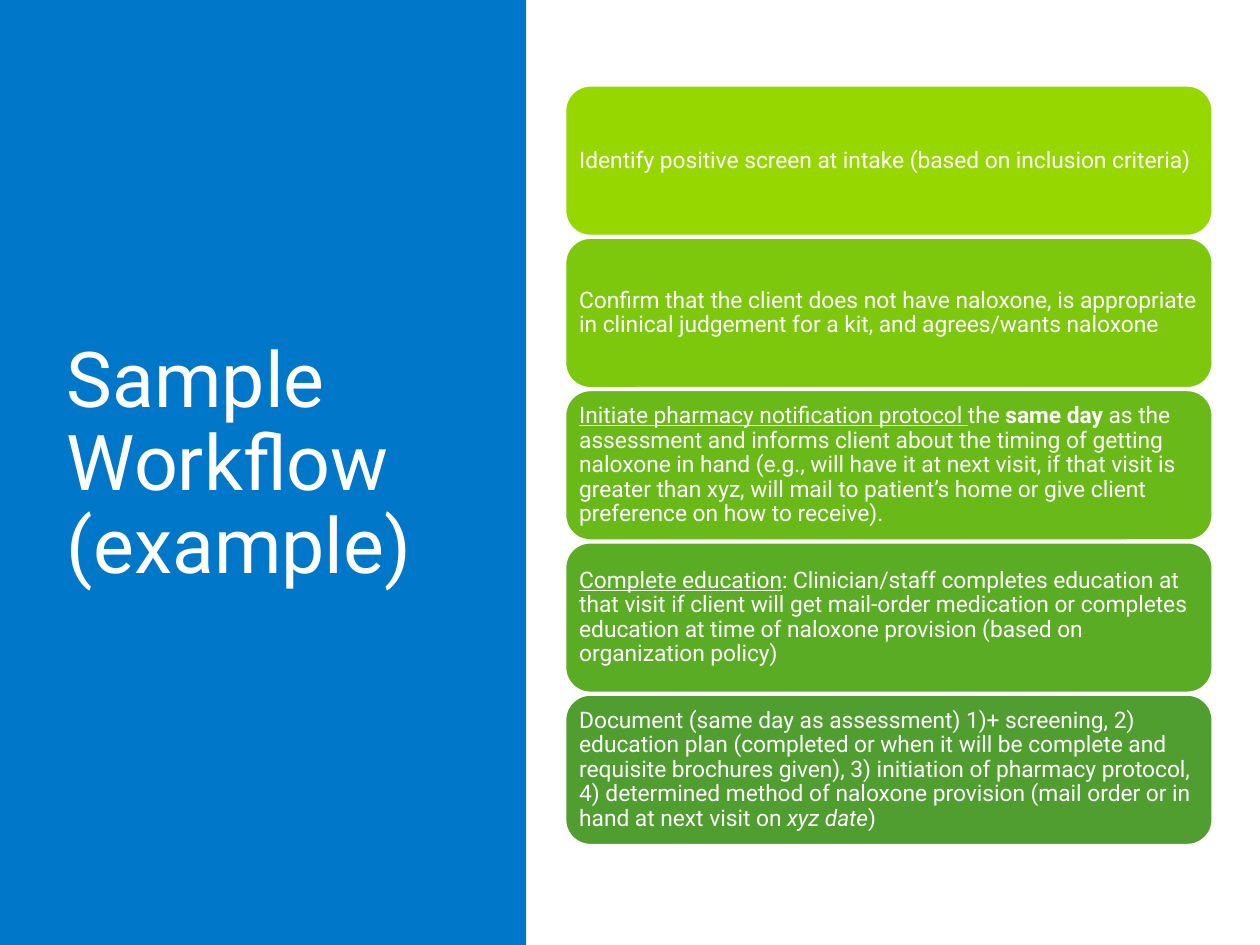
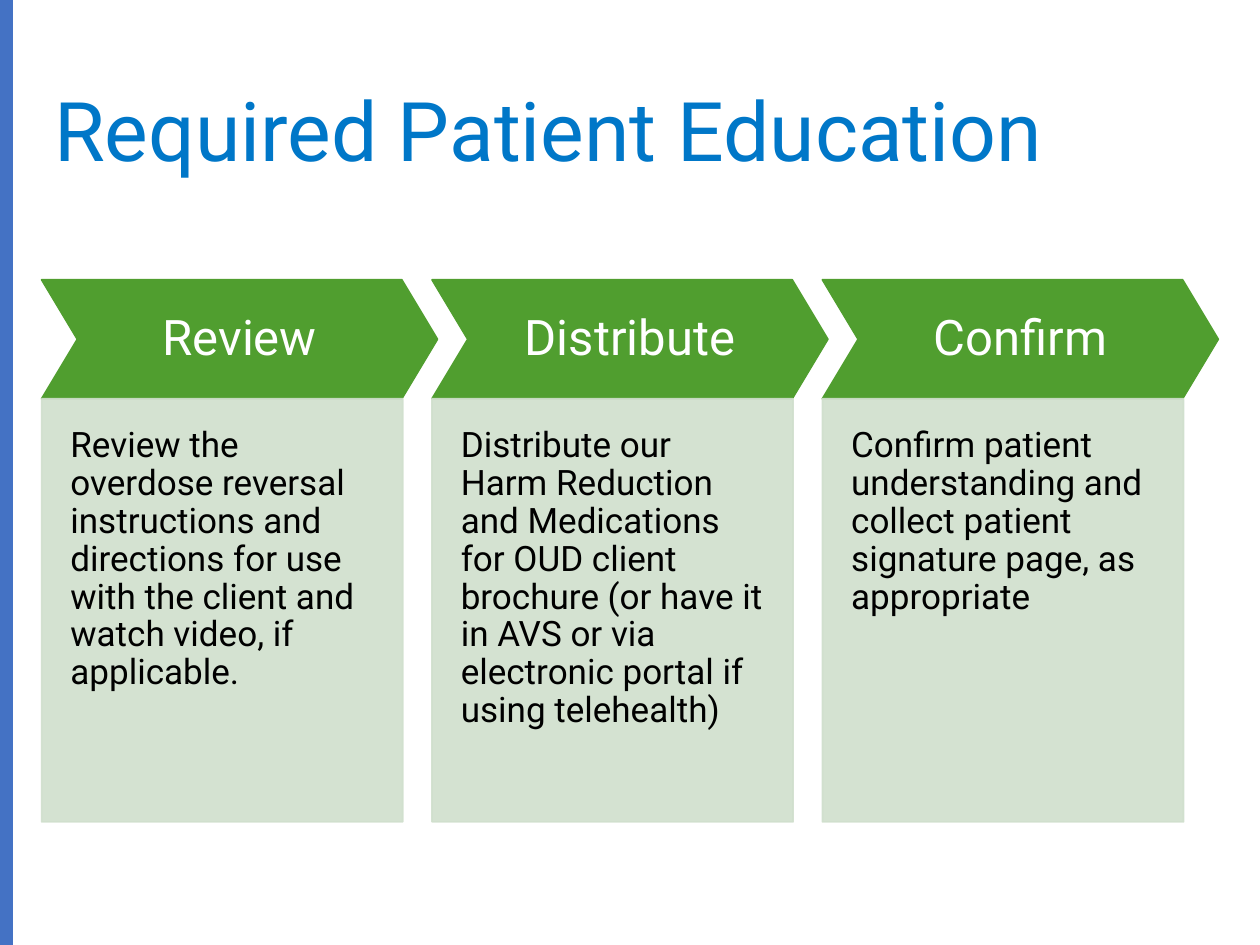
"""Builds two slides: a sample naloxone workflow and the required patient education."""
from lxml import etree
from pptx import Presentation
from pptx.dml.color import RGBColor
from pptx.enum.shapes import MSO_SHAPE
from pptx.enum.text import MSO_ANCHOR, MSO_AUTO_SIZE, PP_ALIGN
from pptx.oxml.ns import qn
from pptx.util import Cm, Pt

RECT, ROUND, CHEVRON = MSO_SHAPE.RECTANGLE, MSO_SHAPE.ROUNDED_RECTANGLE, MSO_SHAPE.CHEVRON
TOP, MIDDLE = MSO_ANCHOR.TOP, MSO_ANCHOR.MIDDLE
LEFT, CENTER = PP_ALIGN.LEFT, PP_ALIGN.CENTER
NO_FIT = MSO_AUTO_SIZE.NONE

WHITE = RGBColor(0xFF, 0xFF, 0xFF)
BLACK = RGBColor(0x00, 0x00, 0x00)
BLUE = RGBColor(0x00, 0x77, 0xC8)
EDGE_BLUE = RGBColor(0x44, 0x72, 0xC4)
GREEN = RGBColor(0x50, 0x9E, 0x2F)
PALE_GREEN = RGBColor(0xD0, 0xDF, 0xCD)
STEP_GREENS = [
    RGBColor(0x97, 0xD7, 0x00),
    RGBColor(0x7D, 0xC8, 0x0C),
    RGBColor(0x69, 0xBA, 0x18),
    RGBColor(0x5A, 0xAC, 0x24),
    GREEN,
]
FONT = "Roboto"
WIDTH, HEIGHT = 25.4, 19.05

PLAIN, UNDERLINE, BOLD, ITALIC = {}, {"underline": True}, {"bold": True}, {"italic": True}

WORKFLOW_TITLE = "Sample Workflow (example)"
WORKFLOW_STEPS = [
    [("Identify positive screen at intake (based on inclusion criteria)", PLAIN)],
    [("Confirm that the client does not have naloxone, is appropriate in clinical "
      "judgement for a kit, and agrees/wants naloxone", PLAIN)],
    [("Initiate pharmacy notification protocol ", UNDERLINE),
     ("the ", PLAIN),
     ("same day", BOLD),
     (" as the assessment and informs client about the timing of getting naloxone in "
      "hand (e.g., will have it at next visit, if that visit is greater than xyz, will "
      "mail to patient’s home or give client preference on how to receive).", PLAIN)],
    [("Complete education", UNDERLINE),
     (": Clinician/staff completes education at that visit if client will get mail-order "
      "medication or completes education at time of naloxone provision (based on "
      "organization policy)", PLAIN)],
    [("Document (same day as assessment) 1)+ screening, 2) education plan (completed or "
      "when it will be complete and requisite brochures given), 3) initiation of pharmacy "
      "protocol, 4) determined method of naloxone provision (mail order or in hand at "
      "next visit on ", PLAIN),
     ("xyz date", ITALIC),
     (")", PLAIN)],
]

EDUCATION_TITLE = "Required Patient Education"
EDUCATION_STEPS = [
    ("Review", "Review the overdose reversal instructions and directions for use with the "
               "client and watch video, if applicable."),
    ("Distribute", "Distribute our Harm Reduction and Medications for OUD client brochure "
                   "(or have it in AVS or via electronic portal if using telehealth)"),
    ("Confirm", "Confirm patient understanding and collect patient signature page, as "
                "appropriate"),
]

STEP_TEXT = {"size": 13, "color": WHITE, "anchor": MIDDLE, "insets": (0.13,) * 4}
HEAD_TEXT = {"size": 28, "color": WHITE, "anchor": MIDDLE, "align": CENTER,
             "insets": (0.1,) * 4}
BODY_TEXT = {"size": 20, "color": BLACK, "anchor": TOP, "insets": (0.58, 0.58, 0.58, 1.14)}


def write(sp, runs, size, color, anchor, align=LEFT, insets=(0.25, 0.13, 0.25, 0.13)):
    """Fill a shape with one paragraph of formatted runs."""
    tf = sp.text_frame
    left, top, right, bottom = map(Cm, insets)
    frame_format = {"word_wrap": True, "auto_size": NO_FIT, "vertical_anchor": anchor,
                    "margin_left": left, "margin_top": top,
                    "margin_right": right, "margin_bottom": bottom}
    for name, value in frame_format.items():
        setattr(tf, name, value)
    p = tf.paragraphs[0]
    p.alignment, p.line_spacing = align, 0.9
    for text, style in runs:
        r = p.add_run()
        r.text = text
        r.font.color.rgb = color
        for name, value in {"name": FONT, "size": Pt(size), **style}.items():
            setattr(r.font, name, value)


def add_box(s, kind, box, fill, line=None, opacity=None):
    """Add a flat preset shape at a (left, top, width, height) box in centimetres."""
    sp = s.shapes.add_shape(kind, *map(Cm, box))
    sp.shadow.inherit = False
    sp.fill.solid()
    sp.fill.fore_color.rgb = fill
    if line is None:
        sp.line.fill.background()
    else:
        sp.line.color.rgb = line
        sp.line.width = Pt(1)
    if opacity is not None:
        for clr in sp._element.spPr.iter(qn("a:srgbClr")):
            etree.SubElement(clr, qn("a:alpha"), val=str(opacity * 1000))
    return sp


def add_slide(prs, title, title_box, size, color, band_width, band_color):
    """Add a slide with a left band behind its title."""
    s = prs.slides.add_slide(prs.slide_layouts[5])
    band = add_box(s, RECT, (0, 0, band_width, HEIGHT), band_color)
    s.shapes.title._element.addprevious(band._element)
    sp = s.shapes.title
    sp.left, sp.top, sp.width, sp.height = map(Cm, title_box)
    write(sp, [(title, PLAIN)], size, color, MIDDLE)
    return s


def add_workflow(prs):
    """Stack the workflow steps beside the title panel."""
    s = add_slide(prs, WORKFLOW_TITLE, (1.1, 1.73, 7.92, 15.3), 44, WHITE, 10.61, BLUE)
    left, top, width, height, pitch = 11.4, 1.73, 13.04, 3.02, 3.07
    for i, (runs, fill) in enumerate(zip(WORKFLOW_STEPS, STEP_GREENS)):
        sp = add_box(s, ROUND, (left, top + i * pitch, width, height), fill, WHITE)
        write(sp, runs, **STEP_TEXT)


def add_education(prs):
    """Set the education steps in columns headed by chevrons."""
    s = add_slide(prs, EDUCATION_TITLE, (0.84, 0.88, 23.78, 3.68), 47, BLUE, 0.26, EDGE_BLUE)
    left, top, pitch = 0.84, 5.64, 7.87
    head_width, head_height, body_width, body_height = 7.98, 2.4, 7.28, 8.53
    for i, (head, body) in enumerate(EDUCATION_STEPS):
        x = left + i * pitch
        sp = add_box(s, CHEVRON, (x, top, head_width, head_height), GREEN, GREEN)
        sp.adjustments[0] = 0.3
        write(sp, [(head, PLAIN)], **HEAD_TEXT)
        sp = add_box(s, RECT, (x, top + head_height, body_width, body_height),
                     PALE_GREEN, PALE_GREEN, opacity=90)
        write(sp, [(body, PLAIN)], **BODY_TEXT)


def main():
    """Build and save the presentation."""
    prs = Presentation()
    prs.slide_width, prs.slide_height = Cm(WIDTH), Cm(HEIGHT)
    add_workflow(prs)
    add_education(prs)
    prs.save("out.pptx")


if __name__ == "__main__":
    main()
